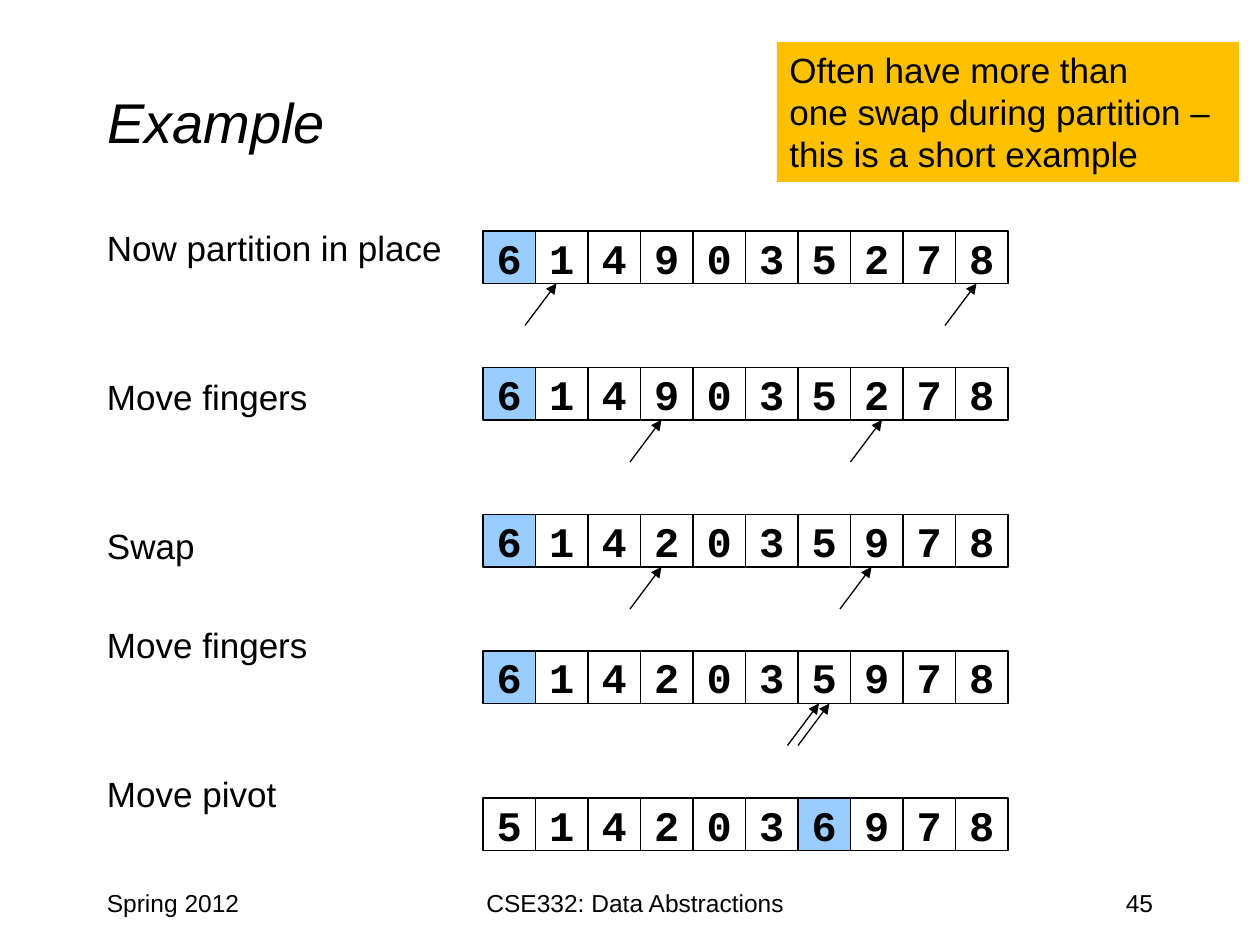
from lxml.etree import SubElement
from pptx import Presentation
from pptx.dml.color import RGBColor
from pptx.enum.shapes import MSO_CONNECTOR, MSO_SHAPE
from pptx.enum.text import MSO_ANCHOR, MSO_AUTO_SIZE, PP_ALIGN as Align
from pptx.oxml.ns import qn
from pptx.util import Inches, Pt

BLACK, PIVOT_BLUE, AMBER = "000000", "99CCFF", "FFC000"
LINE_PITCH, LINE_HEIGHT = 28, 23  # points

# The layout grid has twelve units to the inch.
CELL, ARRAY_LEFT, MARGIN = 5, 46, 9
FINGER_RUN, FINGER_DROP = 3, 4

TITLE = "Example"
CALLOUT = "Often have more than\none swap during partition –\nthis is a short example"
# label, text lines down from the label before
LABELS = [
    ("Now partition in place", 0),
    ("Move fingers", 3),
    ("Swap", 3),
    ("Move fingers", 2),
    ("Move pivot", 3),
]
# grid row, values, index of the pivot, finger tips in grid columns
ARRAYS = [
    (22, "6149035278", 0, (53, 93)),
    (35, "6149035278", 0, (63, 84)),
    (49, "6142035978", 0, (63, 83)),
    (62, "6142035978", 0, (79, 78)),
    (76, "5142036978", 6, ()),
]
# text, left and width in grid units, alignment
FOOTERS = [
    ("Spring 2012", MARGIN, 25, Align.LEFT),
    ("45", 86, 25, Align.RIGHT),
    ("CSE332: Data Abstractions", 38, 45, Align.CENTER),
]


def grid(*units):
    return [Inches(unit / 12) for unit in units]


def color(hex_code):
    return RGBColor.from_string(hex_code)


def write(shape, text, size, align=Align.LEFT, font="Arial", bold=False, italic=False):
    shape.text_frame.text = text
    for para in shape.text_frame.paragraphs:
        para.alignment = align
        for span in para.runs:
            span.font.name, span.font.size = font, Pt(size)
            span.font.bold, span.font.italic = bold, italic
            span.font.color.rgb = color(BLACK)


def add_text(slide, box, text, size, align=Align.LEFT):
    shape = slide.shapes.add_textbox(*grid(*box))
    shape.text_frame.word_wrap = True
    write(shape, text, size, align)
    return shape


def add_labels(slide):
    text = "\n".join(label for label, _ in LABELS)
    box = add_text(slide, (MARGIN, 21, 39, 59), text, 20)
    for para, (_, lines) in zip(box.text_frame.paragraphs, LABELS):
        para.space_before = Pt(max(0, lines * LINE_PITCH - LINE_HEIGHT))


def add_cell(group, left, top, value, is_pivot):
    cell = group.shapes.add_shape(MSO_SHAPE.RECTANGLE, *grid(left, top, CELL, CELL))
    cell.shadow.inherit = False
    if is_pivot:
        cell.fill.solid()
        cell.fill.fore_color.rgb = color(PIVOT_BLUE)
    else:
        cell.fill.background()
    cell.line.color.rgb, cell.line.width = color(BLACK), Pt(0.75)
    cell.text_frame.word_wrap = False
    cell.text_frame.vertical_anchor = MSO_ANCHOR.MIDDLE
    write(cell, value, 24, Align.CENTER, "Courier New", bold=True)


def add_finger(group, tip, bottom):
    """Draw an arrow that points up at the bottom edge of an array."""
    ends = grid(tip - FINGER_RUN, bottom + FINGER_DROP, tip, bottom)
    finger = group.shapes.add_connector(MSO_CONNECTOR.STRAIGHT, *ends)
    finger.line.color.rgb, finger.line.width = color(BLACK), Pt(0.75)
    SubElement(finger.line._get_or_add_ln(), qn("a:tailEnd"), type="triangle")
    SubElement(finger._element.spPr, qn("a:effectLst"))


def add_array(slide, top, values, pivot, tips):
    group = slide.shapes.add_group_shape()
    for index, value in enumerate(values):
        add_cell(group, ARRAY_LEFT + index * CELL, top, value, index == pivot)
    for tip in tips:
        add_finger(group, tip, top + CELL)


def add_callout(slide):
    box = slide.shapes.add_textbox(*grid(74, 4, 44, 13.33))
    box.fill.solid()
    box.fill.fore_color.rgb = color(AMBER)
    box.text_frame.word_wrap = False
    box.text_frame.auto_size = MSO_AUTO_SIZE.SHAPE_TO_FIT_TEXT
    write(box, CALLOUT, 20)


def main():
    deck = Presentation()
    deck.slide_width, deck.slide_height = Inches(10), Inches(7.5)
    slide = deck.slides.add_slide(deck.slide_layouts[5])

    title = slide.shapes.title
    title.left, title.top, title.width, title.height = grid(MARGIN, 4, 102, 15)
    title.text_frame.vertical_anchor = MSO_ANCHOR.MIDDLE
    write(title, TITLE, 32, italic=True)

    add_labels(slide)
    for text, left, width, align in FOOTERS:
        add_text(slide, (left, 84, width, 6), text, 14, align)
    for array in ARRAYS:
        add_array(slide, *array)
    add_callout(slide)
    deck.save("out.pptx")


if __name__ == "__main__":
    main()
